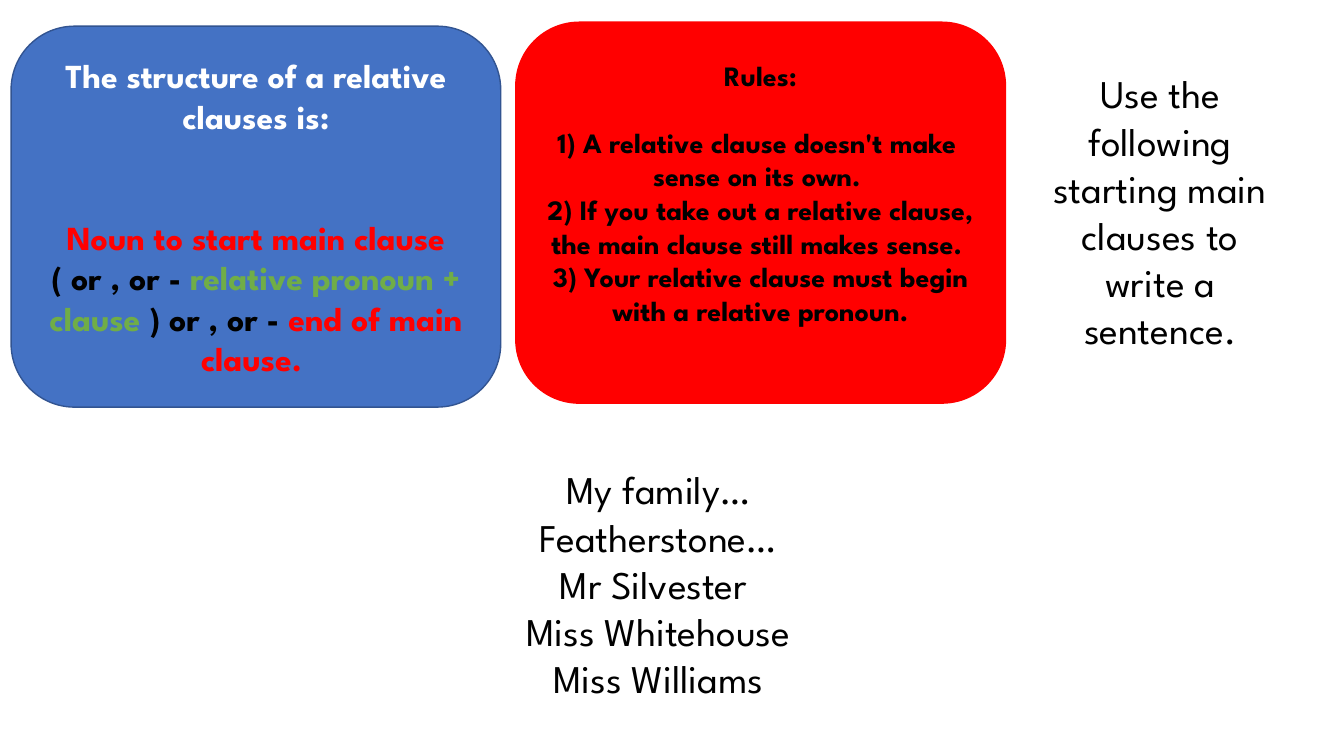
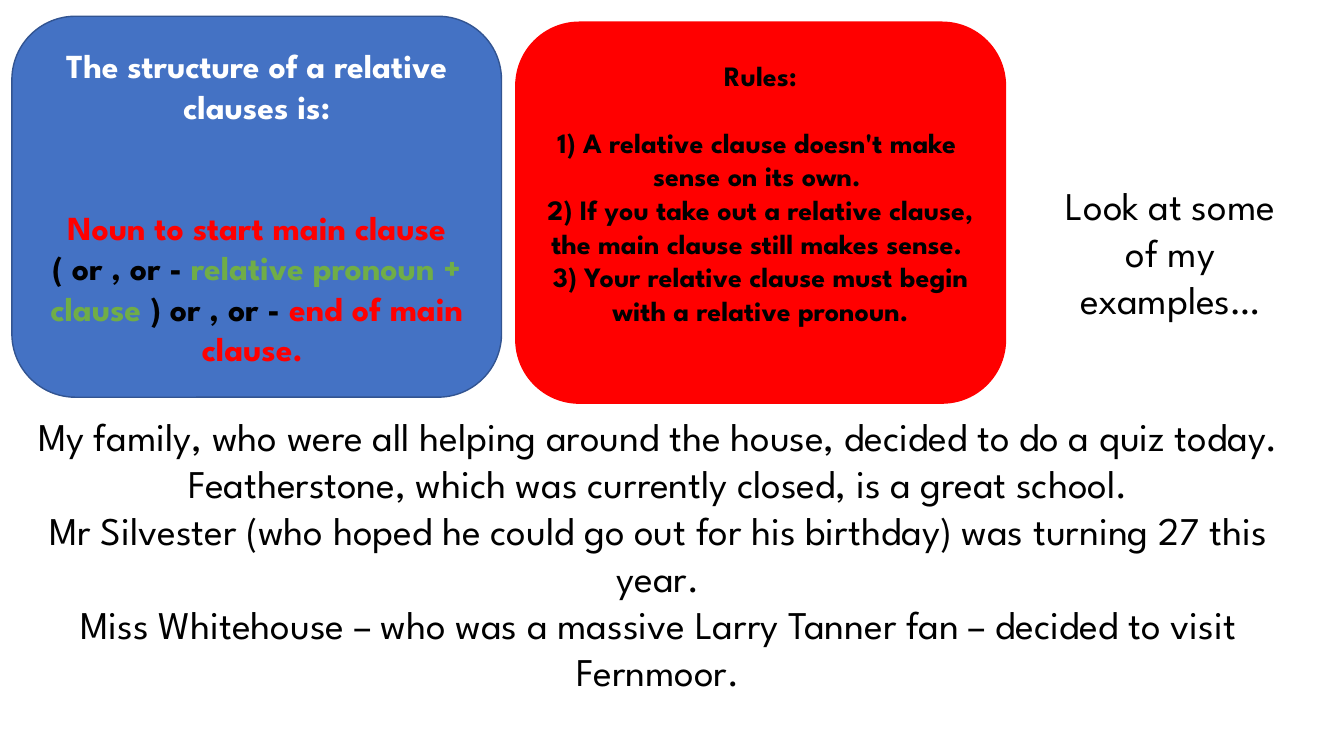
from dataclasses import dataclass

from lxml import etree
from pptx import Presentation
from pptx.dml.color import RGBColor
from pptx.enum.shapes import MSO_SHAPE
from pptx.enum.text import MSO_ANCHOR, MSO_AUTO_SIZE, PP_ALIGN
from pptx.oxml.ns import qn
from pptx.util import Cm, Pt

ROUNDED = MSO_SHAPE.ROUNDED_RECTANGLE
CENTER = PP_ALIGN.CENTER
TOP, MIDDLE = MSO_ANCHOR.TOP, MSO_ANCHOR.MIDDLE
NO_AUTOFIT = MSO_AUTO_SIZE.NONE
TITLE_AND_CONTENT = 1


@dataclass(frozen=True)
class Theme:
    font: str = "League Spartan"
    black: RGBColor = RGBColor(0, 0, 0)
    white: RGBColor = RGBColor(255, 255, 255)
    red: RGBColor = RGBColor(255, 0, 0)
    green: RGBColor = RGBColor(0x70, 0xAD, 0x47)
    blue: RGBColor = RGBColor(0x44, 0x72, 0xC4)
    dark_blue: RGBColor = RGBColor(0x32, 0x54, 0x91)
    body_size: Pt = Pt(28)
    structure_size: Pt = Pt(24)
    rules_size: Pt = Pt(20)


THEME = Theme()
SLIDE_WIDTH, SLIDE_HEIGHT = Cm(33.87), Cm(19.05)
CARD_SIZE = Cm(12.34), Cm(9.6)
PROMPT_WIDTH = Cm(6.15)
SENTENCES_WIDTH = Cm(33.17)

STRUCTURE_HEADING = "The structure of a relative clauses is:"
STRUCTURE_PARTS = [
    ("Noun to start main clause ", THEME.red),
    ("( or , or - ", THEME.black),
    ("relative pronoun + clause ", THEME.green),
    (") or , or - ", THEME.black),
    ("end of main clause. ", THEME.red),
]
RULES = [
    "1) A relative clause doesn't make ",
    "sense on its own. ",
    "2) If you take out a relative clause, the main clause still makes sense. ",
    "3) Your relative clause must begin with a relative pronoun.",
]
STARTERS = ["My family…", "Featherstone…", "Mr Silvester ", "Miss Whitehouse", "Miss Williams"]
EXAMPLES = [
    "My family, who were all helping around the house, decided to do a quiz today.",
    "Featherstone, which was currently closed, is a great school.",
    "Mr Silvester (who hoped he could go out for his birthday) was turning 27 this year.",
    "Miss Whitehouse – who was a massive Larry Tanner fan – decided to visit Fernmoor.",
]


def format_paragraph(paragraph, size, color=None, bold=False, space_before=Pt(0)):
    paragraph.alignment = CENTER
    paragraph.space_before = space_before
    font = paragraph.font
    font.name, font.size, font.bold = THEME.font, size, bold
    if color is not None:
        font.color.rgb = color


def remove_bullet(paragraph):
    properties = paragraph._p.get_or_add_pPr()
    properties.set("marL", "0")
    properties.set("indent", "0")
    properties.append(etree.Element(qn("a:buNone")))


def add_card(slide, left, top, fill, line):
    card = slide.shapes.add_shape(ROUNDED, left, top, *CARD_SIZE)
    card.shadow.inherit = False
    card.fill.solid()
    card.fill.fore_color.rgb = fill
    card.line.color.rgb = line
    card.line.width = Pt(1)
    card.text_frame.word_wrap = True
    card.text_frame.vertical_anchor = MIDDLE
    return card.text_frame


def add_structure_card(slide, left, top):
    frame = add_card(slide, left, top, THEME.blue, THEME.dark_blue)
    heading = frame.paragraphs[0]
    heading.text = STRUCTURE_HEADING
    format_paragraph(heading, THEME.structure_size, THEME.white, bold=True)
    pattern = frame.add_paragraph()
    format_paragraph(pattern, THEME.structure_size, bold=True, space_before=Pt(58))
    for text, color in STRUCTURE_PARTS:
        run = pattern.add_run()
        run.text = text
        run.font.color.rgb = color


def add_rules_card(slide):
    frame = add_card(slide, Cm(13), Cm(0.56), THEME.red, THEME.red)
    frame.margin_bottom = Cm(1.14)
    heading = frame.paragraphs[0]
    heading.text = "Rules:"
    format_paragraph(heading, THEME.rules_size, THEME.black, bold=True)
    for index, rule in enumerate(RULES):
        paragraph = frame.add_paragraph()
        paragraph.text = rule
        gap = Pt(24) if index == 0 else Pt(0)
        format_paragraph(paragraph, THEME.rules_size, THEME.black, bold=True, space_before=gap)


def fill_placeholder(placeholder, left, top, width, height, lines):
    placeholder.left, placeholder.top = left, top
    placeholder.width, placeholder.height = width, height
    frame = placeholder.text_frame
    frame.word_wrap = True
    frame.auto_size = NO_AUTOFIT
    frame.vertical_anchor = TOP
    frame.text = "\n".join(lines)
    for paragraph in frame.paragraphs:
        remove_bullet(paragraph)
        format_paragraph(paragraph, THEME.body_size, THEME.black)


def add_clause_slide(presentation, structure_at, prompt, prompt_at, prompt_height,
                     sentences, sentences_top):
    slide = presentation.slides.add_slide(presentation.slide_layouts[TITLE_AND_CONTENT])
    add_structure_card(slide, *structure_at)
    add_rules_card(slide)
    fill_placeholder(slide.shapes.title, *prompt_at, PROMPT_WIDTH, prompt_height, [prompt])
    fill_placeholder(slide.placeholders[1], Cm(0), sentences_top, SENTENCES_WIDTH,
                     SLIDE_HEIGHT - sentences_top, sentences)


def main():
    presentation = Presentation()
    presentation.slide_width, presentation.slide_height = SLIDE_WIDTH, SLIDE_HEIGHT
    add_clause_slide(
        presentation, (Cm(0.28), Cm(0.66)),
        "Use the following starting main clauses to write a sentence.",
        (Cm(26.16), Cm(1.63)), Cm(8.64), STARTERS, Cm(11.61))
    add_clause_slide(
        presentation, (Cm(0.3), Cm(0.41)),
        "Look at some of my examples…",
        (Cm(26.42), Cm(4.45)), Cm(3.84), EXAMPLES, Cm(10.26))
    presentation.save("out.pptx")


if __name__ == "__main__":
    main()
